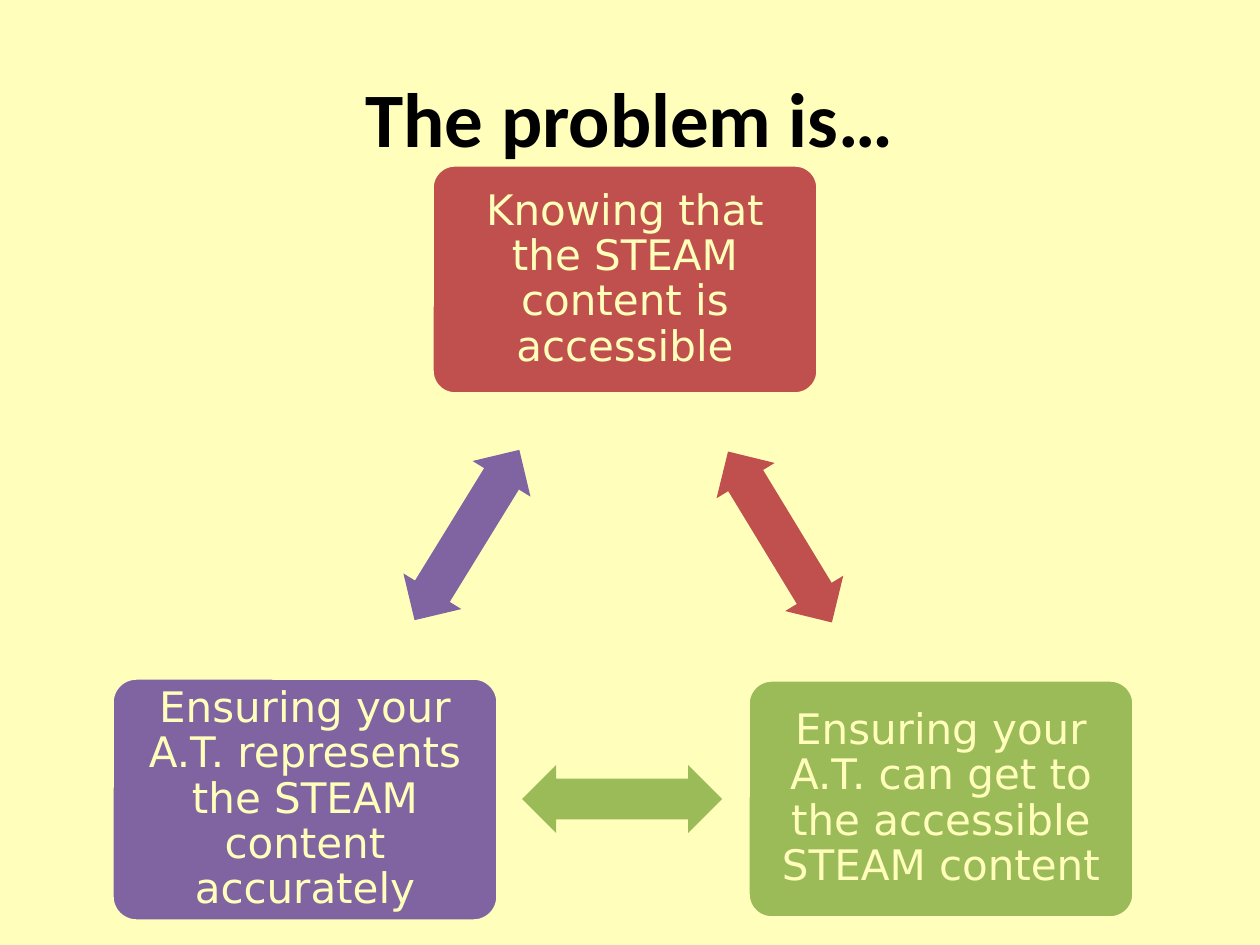
from pptx import Presentation
from pptx.dml.color import RGBColor
from pptx.enum.shapes import MSO_SHAPE
from pptx.enum.text import MSO_ANCHOR, PP_ALIGN
from pptx.util import Inches, Pt

ROUNDED = MSO_SHAPE.ROUNDED_RECTANGLE
DOUBLE_ARROW = MSO_SHAPE.LEFT_RIGHT_ARROW
MIDDLE = MSO_ANCHOR.MIDDLE
CENTER = PP_ALIGN.CENTER

CREAM = RGBColor(0xFF, 0xFF, 0xBB)
BLACK = RGBColor(0x00, 0x00, 0x00)
RED = RGBColor(0xC0, 0x50, 0x4D)
GREEN = RGBColor(0x9B, 0xBB, 0x59)
PURPLE = RGBColor(0x80, 0x64, 0xA2)

PX_PER_INCH = 126
STEP_WIDTH = 386
ARROW_WIDTH, ARROW_HEIGHT = 200, 68

# left, top, height, colour, wording
STEPS = [
    (432, 165, 229, RED, "Knowing that the STEAM content is accessible"),
    (748, 680, 238, GREEN,
     "Ensuring your A.T. can get to the accessible STEAM content"),
    (112, 678, 243, PURPLE,
     "Ensuring your A.T. represents the STEAM content accurately"),
]
# left, top, rotation, colour
ARROWS = [
    (680, 503, 58.7, RED),
    (522, 765, 180, GREEN),
    (367, 501, 301.6, PURPLE),
]


def px(*lengths):
    return [Inches(length / PX_PER_INCH) for length in lengths]


def write_text(frame, wording, font_name, size, color, bold=False):
    frame.word_wrap = True
    frame.vertical_anchor = MIDDLE
    paragraph = frame.paragraphs[0]
    paragraph.alignment = CENTER
    run = paragraph.add_run()
    run.text = wording
    run.font.name = font_name
    run.font.size = Pt(size)
    run.font.bold = bold
    run.font.color.rgb = color
    return paragraph


def add_title(slide, wording):
    title = slide.shapes.add_textbox(*px(63, 38, 1134, 157))
    write_text(title.text_frame, wording, "Calibri", 44, BLACK, bold=True)


def add_filled(slide, preset, box, color):
    shape = slide.shapes.add_shape(preset, *px(*box))
    shape.shadow.inherit = False
    shape.fill.solid()
    shape.fill.fore_color.rgb = color
    return shape


def add_step(slide, left, top, height, color, wording):
    step = add_filled(slide, ROUNDED, (left, top, STEP_WIDTH, height), color)
    step.adjustments[0] = 0.1
    step.line.color.rgb = CREAM
    step.line.width = Pt(2)
    frame = step.text_frame
    frame.margin_left = frame.margin_right = Inches(0.1)
    frame.margin_top = frame.margin_bottom = Inches(0.1)
    paragraph = write_text(frame, wording, "DejaVu Sans", 24, CREAM)
    paragraph.line_spacing = 0.9


def add_arrow(slide, left, top, rotation, color):
    arrow = add_filled(slide, DOUBLE_ARROW,
                       (left, top, ARROW_WIDTH, ARROW_HEIGHT), color)
    arrow.adjustments[0] = 0.6
    arrow.adjustments[1] = 0.5
    arrow.rotation = rotation
    arrow.line.fill.background()


def main():
    prs = Presentation()
    prs.slide_width, prs.slide_height = Inches(10), Inches(7.5)
    slide = prs.slides.add_slide(prs.slide_layouts[6])
    slide.background.fill.solid()
    slide.background.fill.fore_color.rgb = CREAM

    # Cycle: each step is followed by the arrow to the next one
    for step, arrow in zip(STEPS, ARROWS):
        add_step(slide, *step)
        add_arrow(slide, *arrow)

    # Heading
    add_title(slide, "The problem is…")
    prs.save("out.pptx")


if __name__ == "__main__":
    main()
